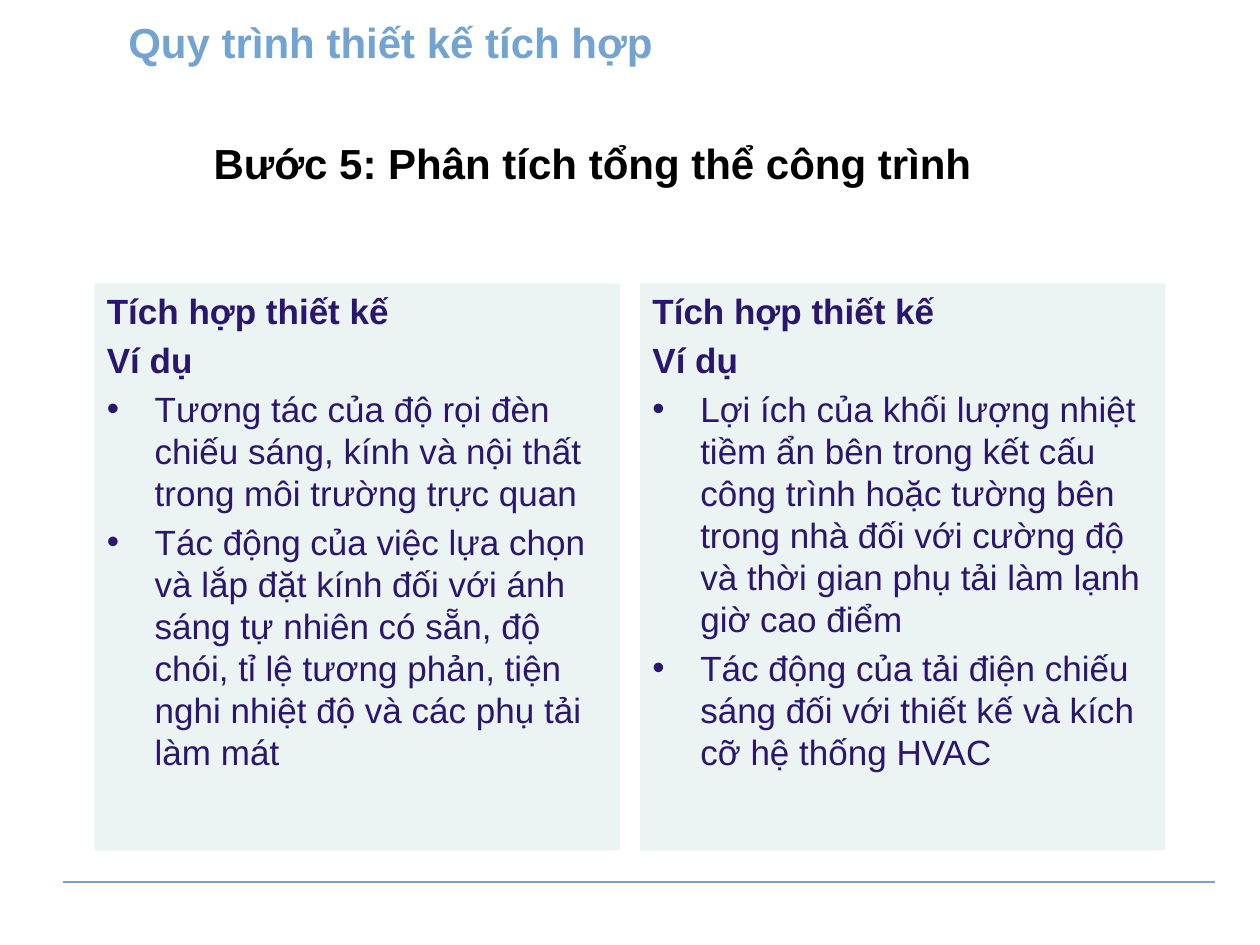
from lxml.etree import SubElement
from pptx import Presentation
from pptx.dml.color import RGBColor
from pptx.enum.shapes import MSO_CONNECTOR, MSO_SHAPE
from pptx.enum.text import MSO_ANCHOR, MSO_AUTO_SIZE, PP_ALIGN
from pptx.oxml.ns import qn
from pptx.util import Inches, Pt

COLORS = {"accent": "73A3D1", "heading": "000000", "panel": "458F8F", "body": "2B166E"}
PANEL_OPACITY = 10
HANGING = Inches(0.38)
PANEL_HEADINGS = ["Tích hợp thiết kế", "Ví dụ"]
PANEL_BULLETS = [
    [
        "Tương tác của độ rọi đèn chiếu sáng, kính và nội thất trong môi trường trực quan",
        "Tác động của việc lựa chọn và lắp đặt kính đối với ánh sáng tự nhiên có sẵn, độ chói, "
        "tỉ lệ tương phản, tiện nghi nhiệt độ và các phụ tải làm mát",
    ],
    [
        "Lợi ích của khối lượng nhiệt tiềm ẩn bên trong kết cấu công trình hoặc tường bên trong "
        "nhà đối với cường độ và thời gian phụ tải làm lạnh giờ cao điểm",
        "Tác động của tải điện chiếu sáng đối với thiết kế và kích cỡ hệ thống HVAC",
    ],
]


def rgb(name):
    """Return the palette colour with the given name."""
    return RGBColor.from_string(COLORS[name])


def write(paragraph, text, size, color, bold):
    """Set the text of a paragraph and format its runs."""
    paragraph.text = text
    for run in paragraph.runs:
        run.font.name = "Arial"
        run.font.size = Pt(size)
        run.font.bold = bold
        run.font.color.rgb = rgb(color)


def indent(paragraph, bulleted):
    """Give a paragraph a hanging indent, with a bullet if asked."""
    properties = paragraph._p.get_or_add_pPr()
    properties.set("marL", str(HANGING))
    properties.set("indent", str(-HANGING))
    if bulleted:
        bullet_color = SubElement(properties, qn("a:buClr"))
        SubElement(bullet_color, qn("a:srgbClr"), val=COLORS["body"])
        SubElement(properties, qn("a:buFont"), typeface="Arial")
        SubElement(properties, qn("a:buChar"), char="•")
    else:
        SubElement(properties, qn("a:buNone"))


def add_topic(slide, left, top, width, height):
    """Place the name of the chapter at the top of the slide."""
    frame = slide.shapes.add_textbox(left, top, width, height).text_frame
    frame.word_wrap = True
    frame.auto_size = MSO_AUTO_SIZE.SHAPE_TO_FIT_TEXT
    write(frame.paragraphs[0], "Quy trình thiết kế tích hợp", 24, "accent", True)


def add_heading(slide, left, top, width, height):
    """Place the centred heading of the step."""
    frame = slide.shapes.add_textbox(left, top, width, height).text_frame
    frame.word_wrap = True
    frame.vertical_anchor = MSO_ANCHOR.MIDDLE
    step = frame.paragraphs[0]
    indent(step, False)
    step.alignment = PP_ALIGN.CENTER
    write(step, "Bước 5: Phân tích tổng thể công trình ", 24, "heading", True)


def add_panel(slide, bullets, left, top, width, height):
    """Place a tinted panel with its headings and bullets."""
    panel = slide.shapes.add_shape(MSO_SHAPE.RECTANGLE, left, top, width, height)
    panel.shadow.inherit = False
    panel.line.fill.background()
    panel.fill.solid()
    panel.fill.fore_color.rgb = rgb("panel")
    tint = panel._element.spPr.find(qn("a:solidFill")).find(qn("a:srgbClr"))
    SubElement(tint, qn("a:alpha"), val=str(PANEL_OPACITY * 1000))

    frame = panel.text_frame
    frame.word_wrap = True
    frame.vertical_anchor = MSO_ANCHOR.TOP
    for index, text in enumerate(PANEL_HEADINGS + bullets):
        paragraph = frame.add_paragraph() if index else frame.paragraphs[0]
        is_heading = index < len(PANEL_HEADINGS)
        indent(paragraph, not is_heading)
        paragraph.alignment = PP_ALIGN.LEFT
        if index:
            paragraph.space_before = Pt(4)
        write(paragraph, text, 20, "body", is_heading)


def add_footer_rule(slide, left, top, width):
    """Place the thin rule at the foot of the slide."""
    rule = slide.shapes.add_connector(MSO_CONNECTOR.STRAIGHT, left, top, left + width, top)
    rule.line.color.rgb = rgb("accent")
    rule.line.width = Pt(1.5)
    SubElement(rule._element.spPr, qn("a:effectLst"))


def main():
    """Build the slide and save it."""
    deck = Presentation()
    deck.slide_width, deck.slide_height = Inches(10), Inches(7.5)
    slide = deck.slides.add_slide(deck.slide_layouts[6])

    add_footer_rule(slide, Inches(0.5), Inches(7), Inches(9.14))
    add_heading(slide, Inches(0.5), Inches(0.75), Inches(8.5), Inches(1.08))
    add_topic(slide, Inches(0.92), Inches(0.08), Inches(7.08), Inches(0.5))
    for column, bullets in enumerate(PANEL_BULLETS):
        left = Inches(0.75 + column * 4.33)
        add_panel(slide, bullets, left, Inches(2.25), Inches(4.17), Inches(4.5))

    deck.save("out.pptx")


if __name__ == "__main__":
    main()
